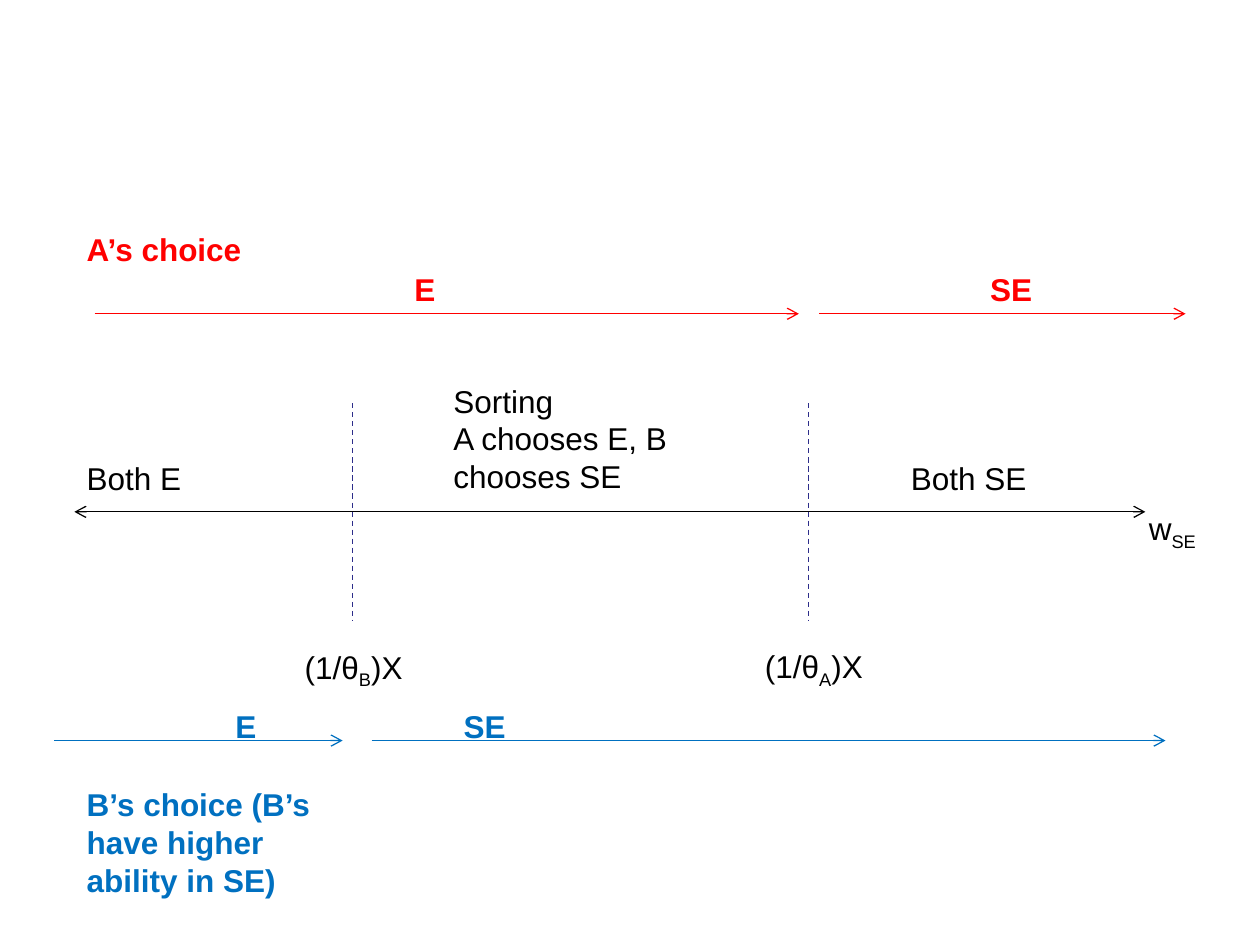
from dataclasses import dataclass

from lxml import etree
from pptx import Presentation
from pptx import util as u
from pptx.dml.color import RGBColor
from pptx.enum import dml, shapes, text
from pptx.oxml.ns import qn


@dataclass(frozen=True)
class Theme:
    black: str = "000000"
    red: str = "FF0000"
    blue: str = "0070C0"
    navy: str = "2D2D8A"
    font: str = "Arial"
    size: float = 18
    line: float = 0.75


THEME = Theme()


def apply_format(target, values):
    for name, value in values.items():
        setattr(target, name, value)


def add_label(page, words, left, top, width, height=28.8, color=THEME.black, bold=False, wrap=True):
    box = page.shapes.add_textbox(u.Pt(left), u.Pt(top), u.Pt(width), u.Pt(height))
    frame = box.text_frame
    apply_format(frame, {"word_wrap": wrap, "auto_size": text.MSO_AUTO_SIZE.SHAPE_TO_FIT_TEXT})
    for index, sentence in enumerate(words.split("\n")):
        para = frame.add_paragraph() if index else frame.paragraphs[0]
        for position, part in enumerate(sentence.split("|")):
            if not part:
                continue
            span = para.add_run()
            span.text = part
            apply_format(span.font, {"name": THEME.font, "size": u.Pt(THEME.size), "bold": bold})
            span.font.color.rgb = RGBColor.from_string(color)
            if position % 2:
                span.font._element.set("baseline", "-25000")


def add_line(page, start, end, color, dash=None, arrows=()):
    points = [u.Pt(value) for value in (*start, *end)]
    line = page.shapes.add_connector(shapes.MSO_CONNECTOR.STRAIGHT, *points)
    apply_format(line.line, {"width": u.Pt(THEME.line), "dash_style": dash})
    line.line.color.rgb = RGBColor.from_string(color)
    properties = line._element.spPr
    outline = properties.find(qn("a:ln"))
    for arrow in arrows:
        etree.SubElement(outline, qn(f"a:{arrow}"), type="arrow")
    etree.SubElement(properties, qn("a:effectLst"))


def add_choice(page, color, title, height, title_top, line_top, label_top, ranges):
    add_label(page, title, 42.5, title_top, 164, height, color, True)
    for name, start, end, label_left in ranges:
        add_line(page, (start, line_top), (end, line_top), color, arrows=["tailEnd"])
        add_label(page, name, label_left, label_top, 57, color=color, bold=True)


def add_threshold(page, person, line_left, label_left, label_top):
    add_line(page, (line_left, 230.4), (line_left, 355), THEME.navy, dml.MSO_LINE.DASH)
    add_label(page, f"(1/θ|{person}|)X", label_left, label_top, 72, wrap=False)


def main():
    deck = Presentation()
    apply_format(deck, {"slide_width": u.Pt(720), "slide_height": u.Pt(540)})
    page = deck.slides.add_slide(deck.slide_layouts[6])

    add_line(page, (42.5, 292.5), (654.5, 292.5), THEME.black, arrows=["headEnd", "tailEnd"])
    add_label(page, "w|SE", 649.4, 287.3, 62.6)
    add_threshold(page, "B", 201.5, 167, 366.5)
    add_threshold(page, "A", 462, 430, 366)

    add_choice(page, THEME.red, "A’s choice", 28.8, 128, 179.3, 151,
               [("E", 54, 456.5, 229.7), ("SE", 468, 677.5, 558.7)])
    add_choice(page, THEME.blue, "B’s choice (B’s have higher ability in SE)", 72.7, 445, 423.2, 400.5,
               [("E", 31, 195.8, 127.4), ("SE", 212.4, 666, 257.8)])

    add_label(page, "Both E", 42.5, 258.5, 153.4)
    add_label(page, "Both SE", 513.4, 258.5, 153.4)
    add_label(page, "Sorting\nA chooses E, B chooses SE", 252, 214.5, 153.4, 72.7)

    deck.save("out.pptx")


if __name__ == "__main__":
    main()
